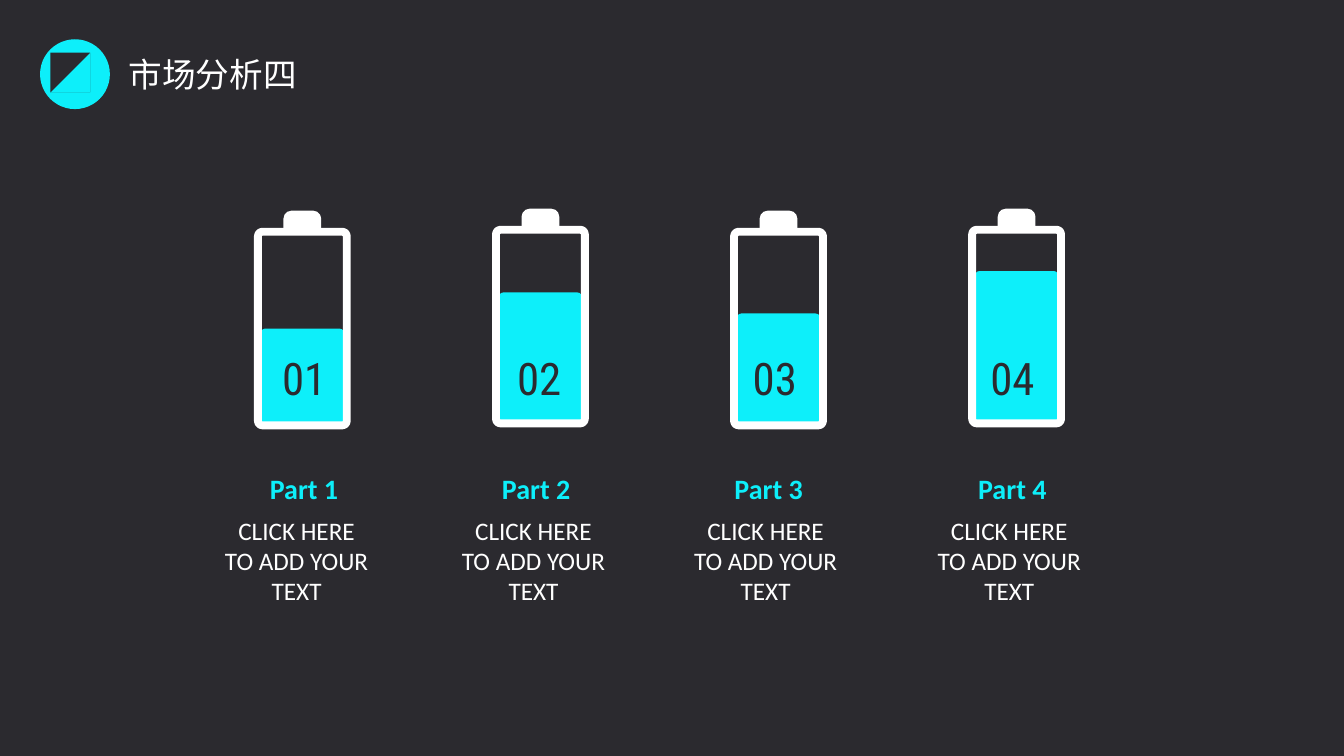
from dataclasses import dataclass

from lxml.etree import SubElement
from pptx import Presentation
from pptx.dml.color import RGBColor
from pptx.enum.shapes import MSO_SHAPE
from pptx.enum.text import MSO_ANCHOR, MSO_AUTO_SIZE, PP_ALIGN
from pptx.oxml.ns import qn
from pptx.util import Cm, Pt


@dataclass(frozen=True)
class Theme:
    dark = RGBColor(0x2B, 0x2A, 0x2F)
    cyan = RGBColor(0x0D, 0xEF, 0xFA)
    white = RGBColor(0xFF, 0xFF, 0xFF)
    title = dict(name="Noto Sans CJK SC", size=Pt(24), bold=False)
    number = dict(name="Roboto Condensed", size=Pt(32))
    heading = dict(name="Calibri", size=Pt(20), bold=True)
    caption = dict(name="Calibri", size=Pt(18))
    frame_line = Pt(5.6)


THEME = Theme()
COLUMN_LEFT, COLUMN_PITCH = 6.4, 6
BATTERY_W, BATTERY_H = 2.44, 5.51

# number, battery top, charge height, then left offsets of number, heading, caption
BATTERIES = [
    (1, 5.31, 2.49, 0.46, 0.15, -1.02),
    (2, 5.26, 3.35, 0.38, 0, -1.05),
    (3, 5.31, 2.87, 0.32, -0.14, -1.2),
    (4, 5.26, 3.89, 0.31, 0, -1.06),
]
PLANE_CONTOURS = [
    [(0.38, 0.69), (0.58, 1.09), (1.07, 0), (0, 0.5)],
    [(0.41, 0.66), (0.1, 0.51), (0.94, 0.13)],
    [(0.58, 0.99), (0.43, 0.69), (0.97, 0.13)],
]


def paint(sp, fill=None, line=None):
    sp.shadow.inherit = False
    if fill is None:
        sp.fill.background()
    else:
        sp.fill.solid()
        sp.fill.fore_color.rgb = fill
    if line is None:
        sp.line.fill.background()
    else:
        sp.line.color.rgb = line
        sp.line.width = THEME.frame_line


def add_block(s, kind, box, radius=None, **colours):
    """Add a painted preset shape; radius is a share of its shorter side."""
    sp = s.shapes.add_shape(kind, *map(Cm, box))
    if radius is not None:
        sp.adjustments[0] = radius
    paint(sp, **colours)


def write(sp, text, style, colour, align=PP_ALIGN.LEFT):
    tf = sp.text_frame
    frame_format = dict(word_wrap=True, vertical_anchor=MSO_ANCHOR.TOP,
                        auto_size=MSO_AUTO_SIZE.SHAPE_TO_FIT_TEXT)
    for name, value in frame_format.items():
        setattr(tf, name, value)
    p = tf.paragraphs[0]
    p.alignment = align
    r = p.add_run()
    r.text = text
    for name, value in style.items():
        setattr(r.font, name, value)
    r.font.color.rgb = colour
    SubElement(r.font._element, qn("a:ea"), typeface=style["name"])


def add_text(s, box, *text_format):
    write(s.shapes.add_textbox(*map(Cm, box)), *text_format)


def add_plane(s, left, top):
    first, *holes = PLANE_CONTOURS
    builder = s.shapes.build_freeform(*first[0], scale=Cm(1))
    builder.add_line_segments(first[1:], close=True)
    for contour in holes:
        builder.move_to(*contour[0])
        builder.add_line_segments(contour[1:], close=True)
    paint(builder.convert_to_shape(Cm(left), Cm(top)), THEME.dark)


def add_header(s, left, top, title):
    add_block(s, MSO_SHAPE.OVAL, (left, top, 1.76, 1.76), fill=THEME.cyan)
    add_plane(s, left + 0.26, top + 0.34)
    sp = s.shapes.title
    box = map(Cm, (left + 1.98, top + 0.23, 4.93, 1.27))
    for name, value in zip(("left", "top", "width", "height"), box):
        setattr(sp, name, value)
    write(sp, title, THEME.title, THEME.white)


def add_battery(s, left, top, width, height, charge):
    cap_w, cap_h, neck, rim = 0.95, 0.55, 0.43, 0.2
    add_block(s, MSO_SHAPE.ROUNDED_RECTANGLE,
              (left + 0.17, top + height - 0.05 - charge, width - 0.34, charge),
              0.055, fill=THEME.cyan)
    add_block(s, MSO_SHAPE.ROUNDED_RECTANGLE,
              (left + rim / 2, top + neck + rim / 2, width - rim, height - neck - rim),
              0.05, line=THEME.white)
    add_block(s, MSO_SHAPE.ROUND_2_SAME_RECTANGLE,
              (left + (width - cap_w) / 2, top, cap_w, cap_h), 0.36, fill=THEME.white)


def add_part(s, left, part):
    number, top, charge, number_dx, heading_dx, caption_dx = part
    add_battery(s, left, top, BATTERY_W, BATTERY_H, charge)
    add_text(s, (left + number_dx, 8.71, 2.11, 1.63), f"{number:02}",
             THEME.number, THEME.dark)
    add_text(s, (left + heading_dx, 11.76, 2.41, 1.12), f"Part {number}",
             THEME.heading, THEME.cyan)
    add_text(s, (left + caption_dx, 12.85, 4.19, 2.57), "CLICK HERE TO ADD YOUR TEXT",
             THEME.caption, THEME.white, PP_ALIGN.CENTER)


def main():
    prs = Presentation()
    prs.slide_width, prs.slide_height = Cm(33.87), Cm(19.05)
    s = prs.slides.add_slide(prs.slide_layouts[5])
    s.background.fill.solid()
    s.background.fill.fore_color.rgb = THEME.dark
    add_header(s, 1.01, 0.99, "市场分析四")
    for i, part in enumerate(BATTERIES):
        add_part(s, COLUMN_LEFT + i * COLUMN_PITCH, part)
    prs.save("out.pptx")


if __name__ == "__main__":
    main()
